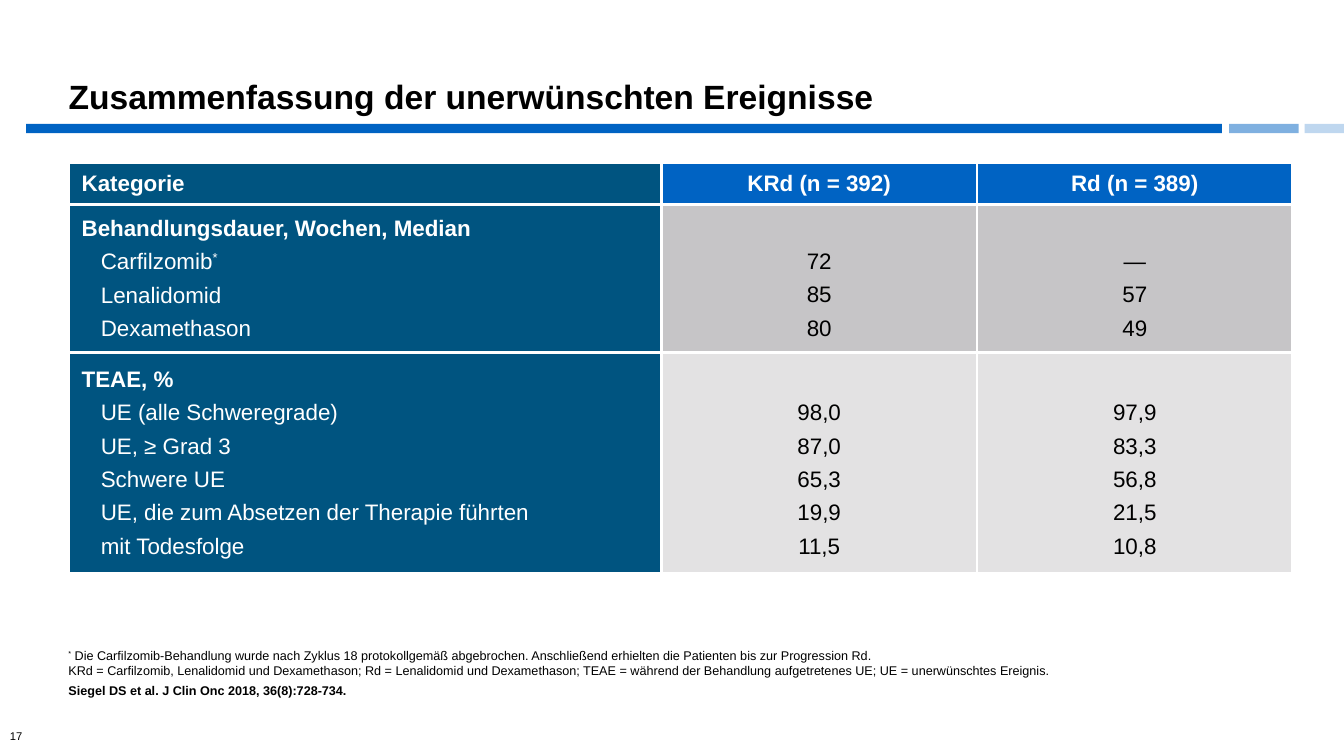
from lxml.etree import SubElement
from pptx import Presentation
from pptx.dml.color import RGBColor
from pptx.enum.shapes import MSO_SHAPE
from pptx.enum.text import MSO_ANCHOR, MSO_AUTO_SIZE, PP_ALIGN
from pptx.oxml.ns import qn
from pptx.util import Inches, Pt

BLUE, PETROL, WHITE, BLACK = "0063C3", "005480", "FFFFFF", "000000"
LINE_STEP = 0.33
HEADERS = ["Kategorie", "KRd (n = 392)", "Rd (n = 389)"]
SECTIONS = [
    ("Behandlungsdauer, Wochen, Median", "C6C5C7", [
        ("Carfilzomib*", "72", "—"),
        ("Lenalidomid", "85", "57"),
        ("Dexamethason", "80", "49"),
    ]),
    ("TEAE, %", "E3E2E3", [
        ("UE (alle Schweregrade)", "98,0", "97,9"),
        ("UE, ≥ Grad 3", "87,0", "83,3"),
        ("Schwere UE", "65,3", "56,8"),
        ("UE, die zum Absetzen der Therapie führten", "19,9", "21,5"),
        ("mit Todesfolge", "11,5", "10,8"),
    ]),
]
FOOTNOTES = [
    "* Die Carfilzomib-Behandlung wurde nach Zyklus 18 protokollgemäß abgebrochen. "
    "Anschließend erhielten die Patienten bis zur Progression Rd.\v"
    "KRd = Carfilzomib, Lenalidomid und Dexamethason; Rd = Lenalidomid und Dexamethason; "
    "TEAE = während der Behandlung aufgetretenes UE; UE = unerwünschtes Ereignis.",
    "Siegel DS et al. J Clin Onc 2018, 36(8):728-734.",
]


def color(value):
    return RGBColor.from_string(value)


class SlideBuilder:
    def __init__(self, slide, font="Arial"):
        self.slide = slide
        self.font = font

    def style(self, para, size, ink=BLACK, bold=False, align=PP_ALIGN.LEFT, after=0):
        para.alignment = align
        para.space_after = Pt(after)
        for span in para.runs:
            span.font.name = self.font
            span.font.size = Pt(size)
            span.font.bold = bold
            span.font.color.rgb = color(ink)

    def fill_lines(self, frame, lines):
        """Put one paragraph per line into the frame and return the paragraphs."""
        frame.text = lines[0]
        for line in lines[1:]:
            frame.add_paragraph().text = line
        return frame.paragraphs

    def raise_marker(self, para, before, after):
        """Split a paragraph around its asterisk and set the asterisk as superscript."""
        para.text = before
        marker = para.add_run()
        marker.text = "*"
        marker.font._element.set("baseline", "30000")
        if after:
            para.add_line_break() if after == "\v" else None
            para.add_run().text = after

    def title(self, text, left, top, width, height):
        box = self.slide.shapes.title
        box.left, box.top, box.width, box.height = map(Inches, (left, top, width, height))
        frame = box.text_frame
        frame.text = text
        frame.word_wrap = True
        frame.auto_size = MSO_AUTO_SIZE.NONE
        frame.vertical_anchor = MSO_ANCHOR.BOTTOM
        frame.paragraphs[0].line_spacing = 0.9
        self.style(frame.paragraphs[0], 24, bold=True)

    def bar(self, left, width, opacity):
        bar = self.slide.shapes.add_shape(
            MSO_SHAPE.RECTANGLE, Inches(left), Inches(1.23), Inches(width), Inches(0.09))
        bar.shadow.inherit = False
        bar.line.fill.background()
        bar.fill.solid()
        bar.fill.fore_color.rgb = color(BLUE)
        if opacity < 100:
            tint = bar._element.spPr.find(qn("a:solidFill"))[0]
            SubElement(tint, qn("a:alpha")).set("val", str(opacity * 1000))

    def text_box(self, lines, left, top, width, height, anchor):
        box = self.slide.shapes.add_textbox(*map(Inches, (left, top, width, height)))
        frame = box.text_frame
        frame.word_wrap = True
        frame.vertical_anchor = anchor
        return self.fill_lines(frame, lines)

    def table(self, left, top, widths, heights):
        table = self.slide.shapes.add_table(
            len(heights), len(widths), Inches(left), Inches(top),
            Inches(sum(widths)), Inches(sum(heights))).table
        for column, width in zip(table.columns, widths):
            column.width = Inches(width)
        for row, height in zip(table.rows, heights):
            row.height = Inches(height)
        return table

    def cell(self, cell, lines, fill, side=0.13, top=0.08):
        cell.margin_left = cell.margin_right = Inches(side)
        cell.margin_top, cell.margin_bottom = Inches(top), Inches(0.08)
        cell.vertical_anchor = MSO_ANCHOR.MIDDLE
        properties = cell._tc.get_or_add_tcPr()
        for edge in ("a:lnL", "a:lnR", "a:lnT", "a:lnB"):
            border = SubElement(properties, qn(edge), w=str(Pt(2.25)))
            paint = SubElement(border, qn("a:solidFill"))
            SubElement(paint, qn("a:srgbClr"), val=WHITE)
        cell.fill.solid()
        cell.fill.fore_color.rgb = color(fill)
        return self.fill_lines(cell.text_frame, lines)


def add_events_table(builder):
    table = builder.table(0.68, 1.61, [5.88, 3.13, 3.13], [0.42, 1.47, 2.19])
    for column, header in enumerate(HEADERS):
        paras = builder.cell(table.cell(0, column), [header], BLUE if column else PETROL)
        builder.style(paras[0], 16, WHITE, True, PP_ALIGN.CENTER if column else PP_ALIGN.LEFT)

    for row, (heading, shade, entries) in enumerate(SECTIONS, start=1):
        labels, *value_columns = zip(*entries)
        paras = builder.cell(table.cell(row, 0), [heading, *labels], PETROL)
        for index, para in enumerate(paras):
            if para.text.endswith("*"):
                builder.raise_marker(para, para.text[:-1], "")
            if index:
                para._p.get_or_add_pPr().set("marL", str(Inches(0.19)))
            builder.style(para, 16, WHITE, index == 0, after=6)
        for column, values in enumerate(value_columns, start=1):
            # The larger top margin keeps the values level with their labels.
            paras = builder.cell(table.cell(row, column), values, shade, 0.04, 0.08 + LINE_STEP)
            for para in paras:
                builder.style(para, 16, align=PP_ALIGN.CENTER, after=6)


def add_footnotes(builder):
    note, source = builder.text_box(FOOTNOTES, 0.58, 6.36, 11.05, 0.61, MSO_ANCHOR.BOTTOM)
    first, second = FOOTNOTES[0][1:].split("\v")
    builder.raise_marker(note, "", first)
    note.add_line_break()
    note.add_run().text = second
    builder.style(note, 9, after=3)
    builder.style(source, 9, bold=True, after=3)


def main():
    deck = Presentation()
    deck.slide_width, deck.slide_height = Inches(13.33), Inches(7.5)
    builder = SlideBuilder(deck.slides.add_slide(deck.slide_layouts[5]))
    builder.title("Zusammenfassung der unerwünschten Ereignisse", 0.58, 0, 12.25, 1.21)
    for left, width, opacity in [(0.26, 11.86, 100), (12.19, 0.69, 50), (12.94, 0.39, 25)]:
        builder.bar(left, width, opacity)
    add_events_table(builder)
    add_footnotes(builder)
    number = builder.text_box(["17"], 0, 7.18, 0.67, 0.24, MSO_ANCHOR.MIDDLE)
    builder.style(number[0], 8)
    deck.save("out.pptx")


if __name__ == "__main__":
    main()
